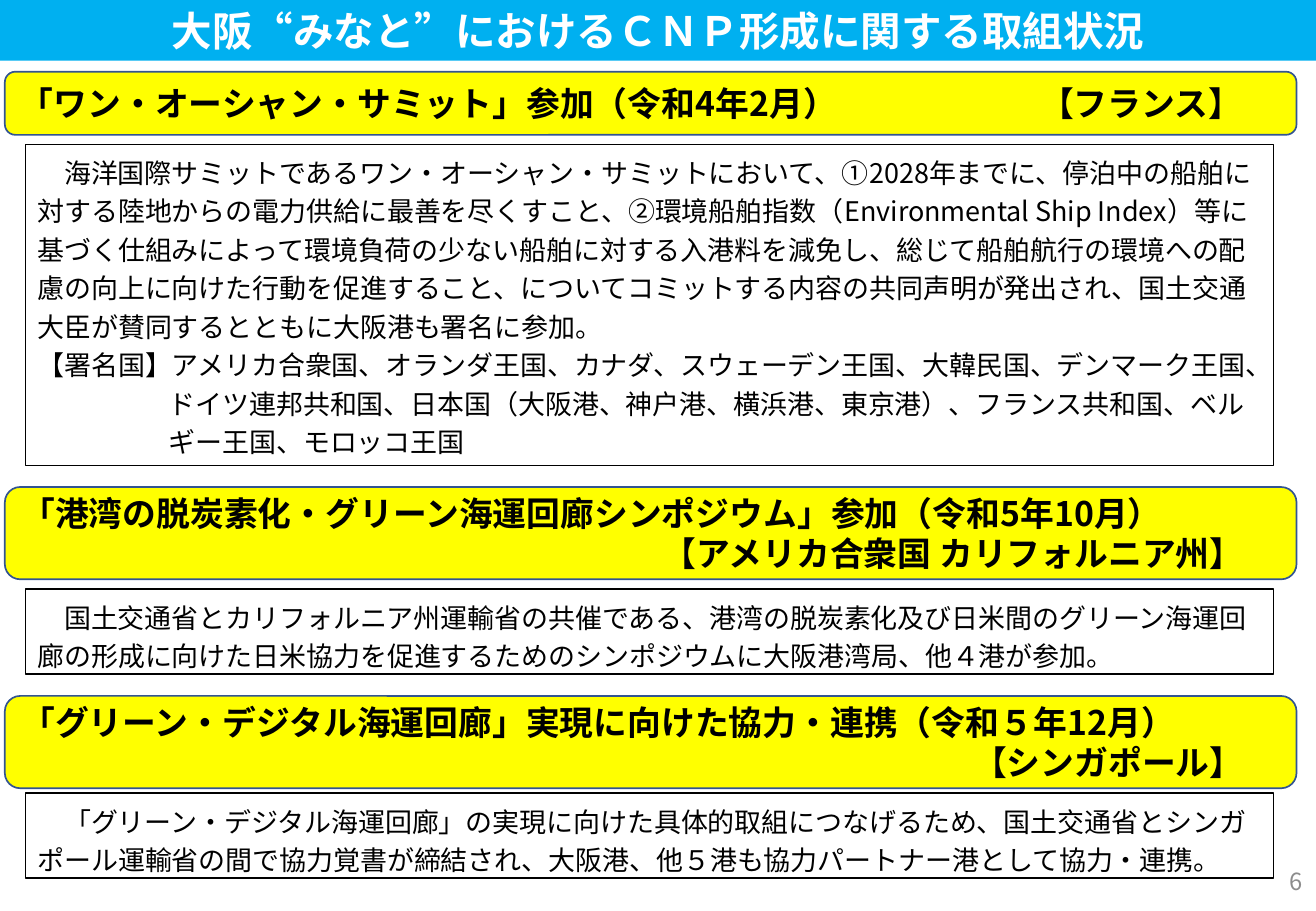
from lxml import etree
from pptx import Presentation
from pptx.dml.color import RGBColor
from pptx.enum import shapes, text
from pptx.oxml import ns
from pptx.util import Inches, Pt

FONT = "Noto Sans CJK JP"
BLACK = RGBColor(0x00, 0x00, 0x00)
WHITE = RGBColor(0xFF, 0xFF, 0xFF)
GRAY = RGBColor(0x8C, 0x8C, 0x8C)
SKY = RGBColor(0x00, 0xB0, 0xF0)
YELLOW = RGBColor(0xFF, 0xFF, 0x00)
NAVY = RGBColor(0x32, 0x54, 0x91)

FIRST_LINE = (0, 0.22)
HANGING = (1.08, -1.08)
PLACE_TAB = 10.06

# heading top, heading height, heading lines, body top, body height, body paragraphs
SECTIONS = [
    (0.59, 0.52, ["「ワン・オーシャン・サミット」参加（令和4年2月）\t【フランス】"],
     1.19, 2.64, [
        ("海洋国際サミットであるワン・オーシャン・サミットにおいて、①2028年までに、停泊中の船舶"
         "に対する陸地からの電力供給に最善を尽くすこと、②環境船舶指数（Environmental Ship Index）等"
         "に基づく仕組みによって環境負荷の少ない船舶に対する入港料を減免し、総じて船舶航行の環境への"
         "配慮の向上に向けた行動を促進すること、についてコミットする内容の共同声明が発出され、国土交"
         "通大臣が賛同するとともに大阪港も署名に参加。", FIRST_LINE),
        ("【署名国】アメリカ合衆国、オランダ王国、カナダ、スウェーデン王国、大韓民国、デンマーク王国、"
         "ドイツ連邦共和国、日本国（大阪港、神戸港、横浜港、東京港）、フランス共和国、ベル"
         "ギー王国、モロッコ王国", HANGING)]),
    (4.01, 0.76, ["「港湾の脱炭素化・グリーン海運回廊シンポジウム」参加（令和5年10月）",
                  "\t【アメリカ合衆国 カリフォルニア州】"],
     4.85, 0.7, [
        ("国土交通省とカリフォルニア州運輸省の共催である、港湾の脱炭素化及び日米間のグリーン海運回"
         "廊の形成に向けた日米協力を促進するためのシンポジウムに大阪港湾局、他４港が参加。", FIRST_LINE)]),
    (5.73, 0.76, ["「グリーン・デジタル海運回廊」実現に向けた協力・連携（令和５年12月）",
                  "\t【シンガポール】"],
     6.53, 0.7, [
        ("「グリーン・デジタル海運回廊」の実現に向けた具体的取組につなげるため、国土交通省とシンガ"
         "ポール運輸省の間で協力覚書が締結され、大阪港、他５港も協力パートナー港として協力・連携。",
         FIRST_LINE)]),
]


class Deck:
    def __init__(self, prs):
        self.s = prs.slides.add_slide(prs.slide_layouts[5])

    def set_text(self, sp, lines, size, color=BLACK, bold=False,
                 align=text.PP_ALIGN.LEFT, anchor=text.MSO_ANCHOR.MIDDLE):
        tf = sp.text_frame
        tf.text = "\n".join(lines)
        tf.word_wrap = True
        tf.auto_size = text.MSO_AUTO_SIZE.NONE
        tf.vertical_anchor = anchor
        for p in tf.paragraphs:
            p.alignment = align
            for r in p.runs:
                r.font.name, r.font.size = FONT, Pt(size)
                r.font.bold, r.font.color.rgb = bold, color
                ea = etree.SubElement(r._r.get_or_add_rPr(), ns.qn("a:ea"))
                ea.set("typeface", FONT)
        return tf.paragraphs

    def box(self, kind, left, top, width, height, line, line_width):
        sp = self.s.shapes.add_shape(
            kind, Inches(left), Inches(top), Inches(width), Inches(height))
        sp.shadow.inherit = False
        sp.fill.background()
        sp.line.color.rgb = line
        sp.line.width = Pt(line_width)
        return sp

    def title(self, line):
        sp = self.s.shapes.title
        sp.left, sp.top = Inches(0), Inches(0)
        sp.width, sp.height = Inches(10.83), Inches(0.5)
        sp.fill.solid()
        sp.fill.fore_color.rgb = SKY
        self.set_text(sp, [line], 24, WHITE, True, text.PP_ALIGN.CENTER)

    def heading(self, top, height, lines):
        """Yellow bar whose place name ends at a right tab stop."""
        sp = self.box(shapes.MSO_SHAPE.ROUNDED_RECTANGLE, 0.04, top, 10.63, height, NAVY, 1)
        sp.fill.solid()
        sp.fill.fore_color.rgb = YELLOW
        for p in self.set_text(sp, lines, 20, bold=True):
            tabs = etree.SubElement(p._p.get_or_add_pPr(), ns.qn("a:tabLst"))
            etree.SubElement(tabs, ns.qn("a:tab"), pos=str(Inches(PLACE_TAB)), algn="r")

    def body(self, top, height, paragraphs):
        sp = self.box(shapes.MSO_SHAPE.RECTANGLE, 0.21, top, 10.27, height, BLACK, 0.75)
        lines = [line for line, _ in paragraphs]
        placed = self.set_text(sp, lines, 16, anchor=text.MSO_ANCHOR.TOP)
        for p, (_, (margin, indent)) in zip(placed, paragraphs):
            p.line_spacing = Pt(22.8)
            pPr = p._p.get_or_add_pPr()
            pPr.set("marL", str(Inches(margin)))
            pPr.set("indent", str(Inches(indent)))

    def page_number(self, number):
        sp = self.s.shapes.add_textbox(Inches(8.57), Inches(7.05), Inches(2.25), Inches(0.4))
        self.set_text(sp, [str(number)], 14, GRAY, align=text.PP_ALIGN.RIGHT)


def main():
    prs = Presentation()
    prs.slide_width, prs.slide_height = Inches(10.83), Inches(7.5)
    deck = Deck(prs)
    deck.title("大阪“みなと”におけるＣＮＰ形成に関する取組状況")
    for top, height, lines, body_top, body_height, paragraphs in SECTIONS:
        deck.heading(top, height, lines)
        deck.body(body_top, body_height, paragraphs)
    deck.page_number(6)
    prs.save("out.pptx")


if __name__ == "__main__":
    main()
